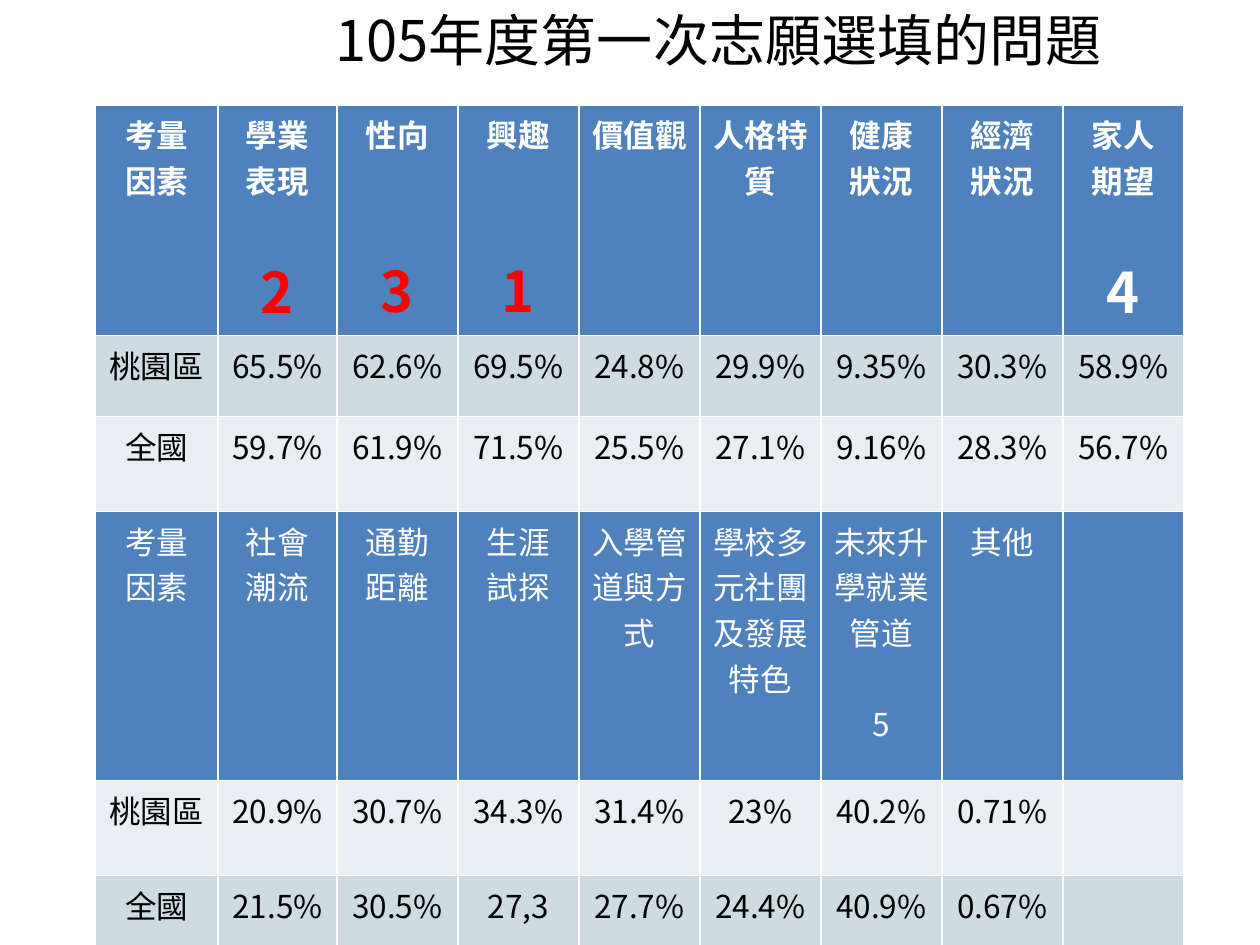
from dataclasses import dataclass

from lxml import etree
from pptx import Presentation
from pptx.dml.color import RGBColor
from pptx.enum.text import MSO_ANCHOR, PP_ALIGN
from pptx.oxml.ns import qn
from pptx.util import Emu, Pt

CENTER = PP_ALIGN.CENTER
LEFT = PP_ALIGN.LEFT
MIDDLE = MSO_ANCHOR.MIDDLE
TITLE_ONLY = 5
EMU_PER_PX = 914400 // 126


def px(length):
    return Emu(length * EMU_PER_PX)


@dataclass(frozen=True)
class Theme:
    font: str = "Noto Sans CJK SC"
    title_size: int = 32
    rank_size: int = 32
    body_size: int = 18
    blank_line: int = 26
    black: str = "000000"
    white: str = "FFFFFF"
    red: str = "FF0000"
    header: str = "4F81BD"
    band_dark: str = "CEDCE1"
    band_light: str = "E8EEF1"


@dataclass(frozen=True)
class Rank:
    text: str
    blank_lines: int
    size: int
    color: str


@dataclass(frozen=True)
class RowStyle:
    height: int
    fill: str
    color: str
    bold: bool = False


class SlideBuilder:
    def __init__(self, presentation, theme):
        self.theme = theme
        self.slide = presentation.slides.add_slide(presentation.slide_layouts[TITLE_ONLY])

    def format_runs(self, paragraph, size, color, bold=False):
        for run in paragraph.runs:
            run.font.name = self.theme.font
            run.font.size = Pt(size)
            run.font.bold = bold
            run.font.color.rgb = RGBColor.from_string(color)
            east_asian = etree.SubElement(run.font._element, qn("a:ea"))
            east_asian.set("typeface", self.theme.font)

    def title(self, text, left, top, width, height):
        shape = self.slide.shapes.title
        shape.left, shape.top, shape.width, shape.height = map(px, (left, top, width, height))
        text_frame = shape.text_frame
        text_frame.text = text
        text_frame.word_wrap = True
        text_frame.vertical_anchor = MIDDLE
        paragraph = text_frame.paragraphs[0]
        paragraph.alignment = LEFT
        self.format_runs(paragraph, self.theme.title_size, self.theme.black)

    def cell(self, cell, content, style):
        cell.fill.solid()
        cell.fill.fore_color.rgb = RGBColor.from_string(style.fill)
        label, rank = content if isinstance(content, tuple) else (content, None)
        cell.text_frame.text = label
        for paragraph in cell.text_frame.paragraphs:
            paragraph.alignment = CENTER
            self.format_runs(paragraph, self.theme.body_size, style.color, style.bold)
        if rank:
            paragraph = cell.text_frame.add_paragraph()
            paragraph.text = rank.text
            paragraph.alignment = CENTER
            paragraph.space_before = Pt(rank.blank_lines * self.theme.blank_line)
            self.format_runs(paragraph, rank.size, rank.color, style.bold)

    def table(self, rows, row_styles, column_widths, left, top):
        heights = [style.height for style in row_styles]
        table = self.slide.shapes.add_table(
            len(rows), len(column_widths),
            px(left), px(top), px(sum(column_widths)), px(sum(heights)),
        ).table
        table.horz_banding = False
        for column, width in zip(table.columns, column_widths):
            column.width = px(width)
        for row, values, style in zip(table.rows, rows, row_styles):
            row.height = px(style.height)
            for cell, content in zip(row.cells, values):
                self.cell(cell, content, style)


def main():
    theme = Theme()
    presentation = Presentation()
    presentation.slide_width, presentation.slide_height = px(1260), px(945)
    builder = SlideBuilder(presentation, theme)

    def top_rank(text, blank_lines, color=theme.red):
        return Rank(text, blank_lines, theme.rank_size, color)

    fifth = Rank("5", 1, theme.body_size, theme.white)
    factor_rows = [
        ["考量\n因素", ("學業表現", top_rank("2", 1)), ("性向", top_rank("3", 2)),
         ("興趣", top_rank("1", 2)), "價值觀", "人格特質", "健康\n狀況", "經濟\n狀況",
         ("家人\n期望", top_rank("4", 1, theme.white))],
        ["桃園區", "65.5%", "62.6%", "69.5%", "24.8%", "29.9%", "9.35%", "30.3%", "58.9%"],
        ["全國", "59.7%", "61.9%", "71.5%", "25.5%", "27.1%", "9.16%", "28.3%", "56.7%"],
        ["考量\n因素", "社會潮流", "通勤\n距離", "生涯\n試探", "入學管道與方式",
         "學校多元社團及發展特色", ("未來升學就業管道", fifth), "其他", ""],
        ["桃園區", "20.9%", "30.7%", "34.3%", "31.4%", "23%", "40.2%", "0.71%", ""],
        ["全國", "21.5%", "30.5%", "27,3", "27.7%", "24.4%", "40.9%", "0.67%", ""],
    ]
    row_styles = [
        RowStyle(218, theme.header, theme.white, True),
        RowStyle(81, theme.band_dark, theme.black),
        RowStyle(95, theme.band_light, theme.black),
        RowStyle(269, theme.header, theme.white),
        RowStyle(95, theme.band_light, theme.black),
        RowStyle(82, theme.band_dark, theme.black),
    ]
    builder.table(factor_rows, row_styles, [123, 119] + [121] * 7, left=95, top=105)
    builder.title("105年度第一次志願選填的問題", left=323, top=0, width=814, height=79)
    presentation.save("out.pptx")


if __name__ == "__main__":
    main()
